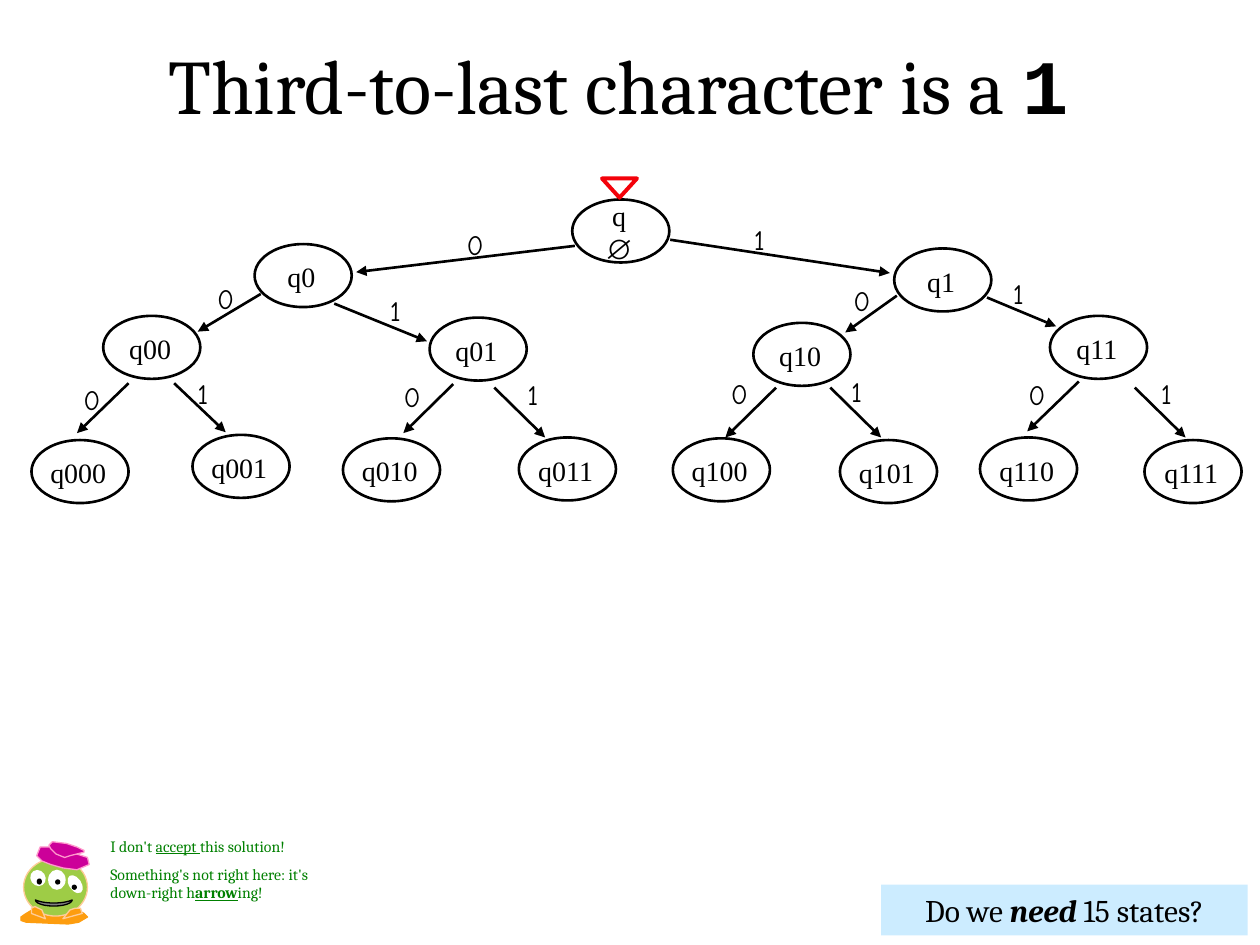
from lxml import etree
from pptx import Presentation
from pptx import util as u
from pptx.dml.color import RGBColor
from pptx.enum import shapes, text
from pptx.oxml.ns import qn

BLACK, WHITE, ORANGE, PEACH = "000000", "FFFFFF", "FD9D0F", "FFCC99"
NODE_W, NODE_H = 55.5, 36
NODES = {
    "q∅": (327, 114), "q0": (145.5, 139.5), "q1": (511, 142),
    "q00": (59, 180.5), "q01": (245.5, 181.5), "q10": (430.5, 184.5), "q11": (600, 180.5),
    "q000": (18, 251.5), "q001": (110, 248.5), "q010": (196, 250.5), "q011": (296.5, 250),
    "q100": (384.5, 250.5), "q101": (480, 251.5), "q110": (560, 250), "q111": (654, 251.5),
}
EDGES = {
    "q0": ((328.5, 140.5), (203.5, 155.5), (271.5, 139.5)),
    "q1": ((383, 137), (508.5, 156), (434, 136.5)),
    "q00": ((149, 168), (113, 189.5), (129, 170.5)),
    "q01": ((191, 173.5), (244, 195), (226, 177.5)),
    "q10": ((512.5, 169), (483, 190), (492.5, 171.5)),
    "q11": ((564, 170), (603.5, 186.5), (582, 167.5)),
    "q000": ((73.5, 219), (44, 247.5), (52.5, 228)),
    "q001": ((99.5, 219), (129, 247), (116, 224.5)),
    "q010": ((259, 219.5), (230.5, 247.5), (235.5, 226.5)),
    "q011": ((282.5, 221.5), (311.5, 250), (304.5, 225.5)),
    "q100": ((443.5, 221.5), (414.5, 250), (422.5, 225)),
    "q101": ((474.5, 221.5), (503.5, 250), (489.5, 223.5)),
    "q110": ((616.5, 218), (587, 246.5), (592.5, 225.5)),
    "q111": ((648.5, 221.5), (677.5, 250), (666.5, 225)),
}
FEET = [(19, 36), (26, 36.5), (32.5, 39), (36.5, 41.5), (37.5, 43), (33, 46), (27, 46.5),
        (3, 46), (0.5, 44.5), (0.5, 43), (3, 41), (7.5, 38), (14, 35)]
BERET = [[(19, 3.5), (11, 3.5), (9, 8), (11.5, 11.5), (17, 13), (23.5, 15), (32, 16),
          (39, 13), (37.5, 9.5), (35, 8)],
         [(19.5, 6.5), (17, 4), (16, 2), (18, 0), (26, 0.5), (32.5, 3), (36, 4.5),
          (35.5, 6), (28.5, 8), (25, 9.5)]]
TOES = [[(5.5, 41), (5.5, 38), (8, 37.5), (12, 39), (14.5, 44)],
        [(35, 41), (34, 38), (31, 38), (27.5, 39.5), (24.5, 44)]]
OVALS = [((1.5, 9.5, 36.5, 33), "9ECC46", PEACH, 0),
         ((5.5, 16, 8.5, 9.5), WHITE, None, 327), ((15.5, 16, 10, 11.5), WHITE, None, 0),
         ((27.5, 18.5, 7, 11.5), WHITE, None, 325.5), ((9, 21, 3, 3.5), BLACK, None, 0),
         ((19.5, 21.5, 3, 3), BLACK, None, 0), ((29, 24.5, 3, 3), BLACK, None, 0)]


def color(value):
    """Turn a hex string into a colour."""
    return RGBColor.from_string(value)


def paint(sp, fill=None, line=None, width=0.75):
    """Set fill and outline of a shape and drop its shadow."""
    sp.shadow.inherit = False
    if fill:
        sp.fill.solid()
        sp.fill.fore_color.rgb = color(fill)
    else:
        sp.fill.background()
    if line:
        sp.line.color.rgb = color(line)
        sp.line.width = u.Pt(width)
    else:
        sp.line.fill.background()


def write(p, parts, size, font, ink=BLACK, align=text.PP_ALIGN.CENTER):
    """Fill a paragraph with (text, style) runs; style maps font attributes to values."""
    p.alignment = align
    for content, style in parts:
        r = p.add_run()
        r.text = content
        r.font.size = u.Pt(size)
        r.font.name = font
        r.font.color.rgb = color(ink)
        for name, value in style.items():
            setattr(r.font, name, value)


def add_preset(holder, kind, box, fill=None, line=None, width=0.75, turn=0):
    """Add a painted preset shape in a box given in points."""
    sp = holder.add_shape(kind, *map(u.Pt, box))
    sp.rotation = turn
    paint(sp, fill, line, width)
    return sp


def add_outline(holder, points, origin=(0, 0), fill=None, line=None, width=0.75):
    """Add a closed polygon whose points are relative to the origin."""
    moved = [(origin[0] + x, origin[1] + y) for x, y in points]
    builder = holder.build_freeform(*moved[0], scale=u.Pt(1))
    builder.add_line_segments(moved[1:])
    paint(builder.convert_to_shape(), fill, line, width)


def add_label(holder, center, width, parts, font, wrap=False):
    """Add a one-paragraph text box around a centre point."""
    height = 26.5
    box = (center[0] - width / 2, center[1] - height / 2, width, height)
    tf = holder.add_textbox(*map(u.Pt, box)).text_frame
    tf.word_wrap = wrap
    tf.vertical_anchor = text.MSO_ANCHOR.MIDDLE
    tf.auto_size = text.MSO_AUTO_SIZE.NONE if wrap else text.MSO_AUTO_SIZE.SHAPE_TO_FIT_TEXT
    write(tf.paragraphs[0], parts, 16, font)


def add_state(s, name, left, top):
    """Group a state's ellipse with its name."""
    holder = s.shapes.add_group_shape().shapes
    add_preset(holder, shapes.MSO_SHAPE.OVAL, (left, top, NODE_W, NODE_H), line=BLACK, width=1.5)
    root = name == "q∅"
    parts = [("q", {}), ("∅", {"name": "Arial"})] if root else [(name, {})]
    width = 36 if root else 15.5 + 7.75 * len(name)
    center = (left + NODE_W / 2 - 1, top + NODE_H / 2 + 0.5)
    add_label(holder, center, width, parts, "Times New Roman", wrap=root)


def add_arrow(s, start, end):
    """Draw an arrow between two points."""
    line = s.shapes.add_connector(shapes.MSO_CONNECTOR.STRAIGHT, *map(u.Pt, start + end))
    line.line.color.rgb = color(BLACK)
    line.line.width = u.Pt(1.5)
    etree.SubElement(line.line._get_or_add_ln(), qn("a:tailEnd"), type="triangle")
    etree.SubElement(line._element.spPr, qn("a:effectLst"))


def add_tree(s):
    """Draw the states, transitions and start marker."""
    for name, (left, top) in NODES.items():
        add_state(s, name, left, top)
    for child, (start, end, center) in EDGES.items():
        add_arrow(s, start, end)
        digit = child[-1]
        add_label(s.shapes, center, 24.5 if digit == "0" else 21.5, [(digit, {})], "Comic Neue")
    marker = [(0, 0), (20, 0), (10, 10.5)]
    add_outline(s.shapes, marker, (343.5, 102.5), line="F3020A", width=2.25)


def add_mascot(s, left, top):
    """Draw the three-eyed mascot with its beret."""
    holder, origin = s.shapes.add_group_shape().shapes, (left, top)
    add_outline(holder, FEET, origin, ORANGE, ORANGE)
    for (x, y, w, h), fill, line, turn in OVALS:
        add_preset(holder, shapes.MSO_SHAPE.OVAL, (left + x, top + y, w, h), fill, line, turn=turn)
    mouth = (left + 17, top + 24.5, 3.5, 21)
    add_preset(holder, shapes.MSO_SHAPE.MOON, mouth, "808080", BLACK, turn=270)
    for points in BERET:
        add_outline(holder, points, origin, "CC0099", "FF99CC")
    for points in TOES:
        add_outline(holder, points, origin, ORANGE, PEACH)


def add_remark(s, box):
    """Write the mascot's remark."""
    tf = s.shapes.add_textbox(*map(u.Pt, box)).text_frame
    tf.word_wrap = True
    first = [("I don't ", {}), ("accept ", {"underline": True}), ("this solution!", {})]
    second = [("Something's not right here: it's down-right h", {}),
              ("arrow", {"bold": True, "underline": True}), ("ing!", {})]
    write(tf.paragraphs[0], first, 9, "Cambria", "008000", text.PP_ALIGN.LEFT)
    p = tf.add_paragraph()
    p.space_before = u.Pt(5)
    write(p, second, 9, "Cambria", "008000", text.PP_ALIGN.LEFT)


def add_question(s, box):
    """Add the shaded question bar."""
    tf = add_preset(s.shapes, shapes.MSO_SHAPE.RECTANGLE, box, "CCECFF").text_frame
    tf.word_wrap = True
    tf.vertical_anchor = text.MSO_ANCHOR.TOP
    parts = [("Do we ", {}), ("need ", {"bold": True, "italic": True}), ("15 states?", {})]
    write(tf.paragraphs[0], parts, 18, "Cambria")


def add_title(s, box):
    """Place and format the title."""
    title = s.shapes.title
    title.left, title.top, title.width, title.height = map(u.Pt, box)
    tf = title.text_frame
    tf.vertical_anchor = text.MSO_ANCHOR.TOP
    tf.auto_size = text.MSO_AUTO_SIZE.NONE
    parts = [("Third-to-last character is a ", {}), ("1", {"name": "Courier New", "bold": True})]
    write(tf.paragraphs[0], parts, 44, "Cambria")


def main():
    """Build and save the slide."""
    prs = Presentation()
    prs.slide_width, prs.slide_height = u.Pt(720), u.Pt(540)
    s = prs.slides.add_slide(prs.slide_layouts[5])
    add_title(s, (37.5, 18, 632, 60))
    add_question(s, (503.5, 505.5, 209.5, 29))
    add_tree(s)
    add_mascot(s, 12, 481)
    add_remark(s, (56, 474.5, 130.5, 45.5))
    prs.save("out.pptx")


if __name__ == "__main__":
    main()
